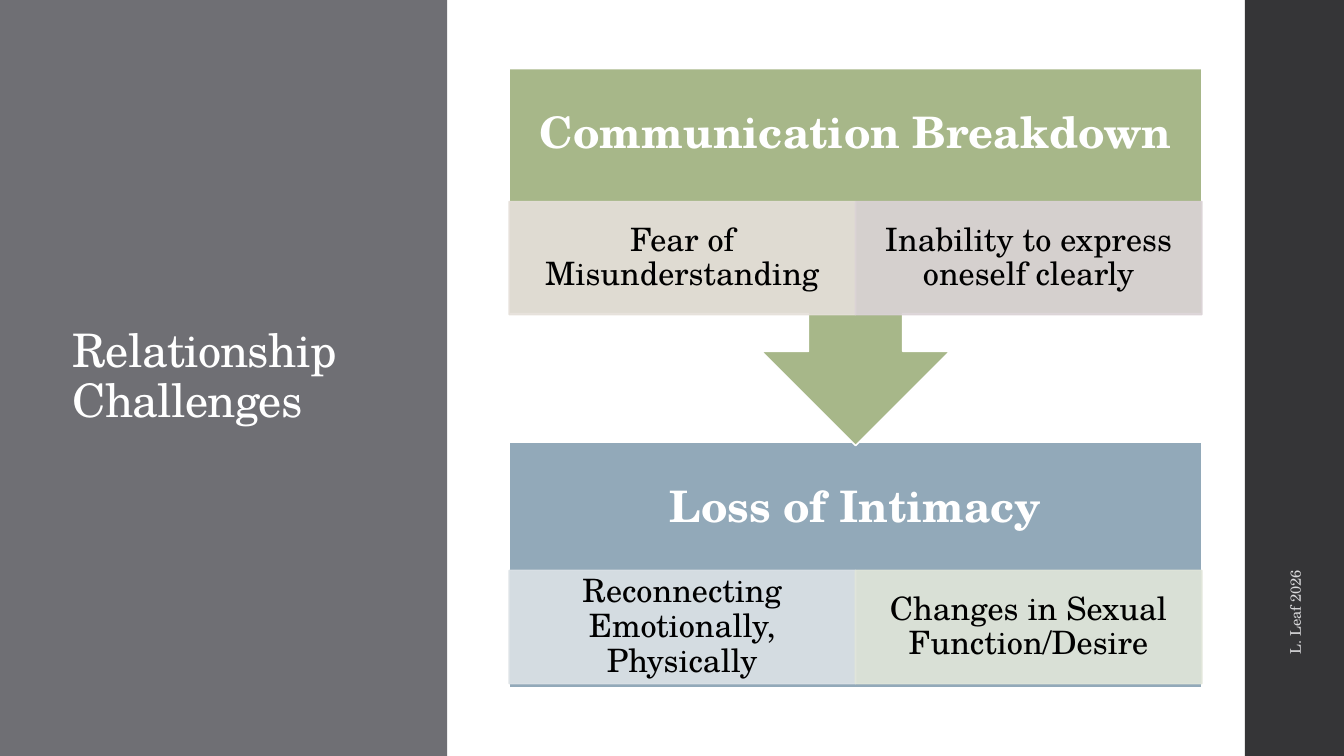
import pptx
import pptx.util
import pptx.dml.color
import pptx.enum.shapes
import pptx.enum.text
import pptx.oxml.ns
from lxml import etree

Pt = pptx.util.Pt
SHAPES = pptx.enum.shapes.MSO_SHAPE
ALIGN = pptx.enum.text.PP_ALIGN
MIDDLE = pptx.enum.text.MSO_ANCHOR.MIDDLE

FONT = "TeX Gyre Schola"
TITLE = "Relationship Challenges"
CREDIT = "L. Leaf 2026"
CHALLENGES = [
    {
        "heading": "Loss of Intimacy", "color": "92A9B9",
        "shape": SHAPES.RECTANGLE, "rotation": 0,
        "top": 316, "height": 175, "tiles_top": 407.5,
        "tiles": [("Reconnecting Emotionally, Physically", "DCE2E6"),
                  ("Changes in Sexual Function/Desire", "E1E6DA")],
    },
    {
        "heading": "Communication Breakdown", "color": "A7B789",
        "shape": SHAPES.UP_ARROW_CALLOUT, "rotation": 180,
        "top": 49, "height": 269.3, "tiles_top": 144,
        "tiles": [("Fear of Misunderstanding", "E6E0DA"),
                  ("Inability to express oneself clearly", "DBD3D6")],
    },
]
SLIDE_WIDTH, SLIDE_HEIGHT = 960, 540
LEFT, WIDTH = 363.7, 494.8
HEADING_HEIGHT, TILE_HEIGHT = 94.3, 80.8


def rgb(value):
    return pptx.dml.color.RGBColor.from_string(value)


def add_block(page, kind, frame, fill, line=None, opacity=None):
    block = page.shapes.add_shape(kind, *map(Pt, frame))
    block.shadow.inherit = False
    block.fill.solid()
    block.fill.fore_color.rgb = rgb(fill)
    if line:
        block.line.color.rgb = rgb(line)
        block.line.width = Pt(1.1)
    else:
        block.line.fill.background()
    if opacity:
        for color in block._element.spPr.iter(pptx.oxml.ns.qn("a:srgbClr")):
            alpha = etree.SubElement(color, pptx.oxml.ns.qn("a:alpha"))
            alpha.set("val", str(opacity * 1000))
    return block


def write(box, text, size, color, align, bold=False, spacing=0.9, insets=(7.2, 3.6)):
    frame = box.text_frame
    frame.word_wrap = True
    frame.auto_size = pptx.enum.text.MSO_AUTO_SIZE.NONE
    frame.vertical_anchor = MIDDLE
    frame.margin_left = frame.margin_right = Pt(insets[0])
    frame.margin_top = frame.margin_bottom = Pt(insets[1])
    frame.text = text
    para = frame.paragraphs[0]
    para.alignment = align
    para.line_spacing = spacing
    span = para.runs[0]
    span.font.name = FONT
    span.font.size = Pt(size)
    span.font.bold = bold
    span.font.color.rgb = rgb(color)
    return span


def add_challenge(page, challenge):
    top = challenge["top"]
    block = add_block(page, challenge["shape"], (LEFT, top, WIDTH, challenge["height"]),
                      challenge["color"], "FFFFFF")
    block.rotation = challenge["rotation"]
    heading = page.shapes.add_textbox(*map(Pt, (LEFT, top, WIDTH, HEADING_HEIGHT)))
    write(heading, challenge["heading"], 31, "FFFFFF", ALIGN.CENTER, True, insets=(17.3, 17.3))
    tile_width = WIDTH / len(challenge["tiles"])
    for column, (text, color) in enumerate(challenge["tiles"]):
        frame = (LEFT + column * tile_width, challenge["tiles_top"], tile_width, TILE_HEIGHT)
        tile = add_block(page, SHAPES.RECTANGLE, frame, color, color, 90)
        write(tile, text, 23, "000000", ALIGN.CENTER, insets=(13, 2.2))


def main():
    deck = pptx.Presentation()
    deck.slide_width, deck.slide_height = Pt(SLIDE_WIDTH), Pt(SLIDE_HEIGHT)
    page = deck.slides.add_slide(deck.slide_layouts[5])
    title = page.shapes.title
    panel = add_block(page, SHAPES.RECTANGLE, (0, 0, 319.5, SLIDE_HEIGHT), "6F6F74")
    title._element.addprevious(panel._element)
    title.left, title.top, title.width, title.height = map(Pt, (44.6, 65.5, 213.8, 408.2))
    span = write(title, TITLE, 33, "FFFFFF", ALIGN.LEFT)
    span._r.get_or_add_rPr().set("spc", "-50")
    add_block(page, SHAPES.RECTANGLE, (889.2, 0, SLIDE_WIDTH - 889.2, SLIDE_HEIGHT), "353537")
    for challenge in CHALLENGES:
        add_challenge(page, challenge)
    credit = page.shapes.add_textbox(*map(Pt, (784, 319, 282.2, 28.8)))
    credit.rotation = 270
    write(credit, CREDIT, 10.5, "D9D9DB", ALIGN.LEFT, spacing=1.0)
    deck.save("out.pptx")


if __name__ == "__main__":
    main()
